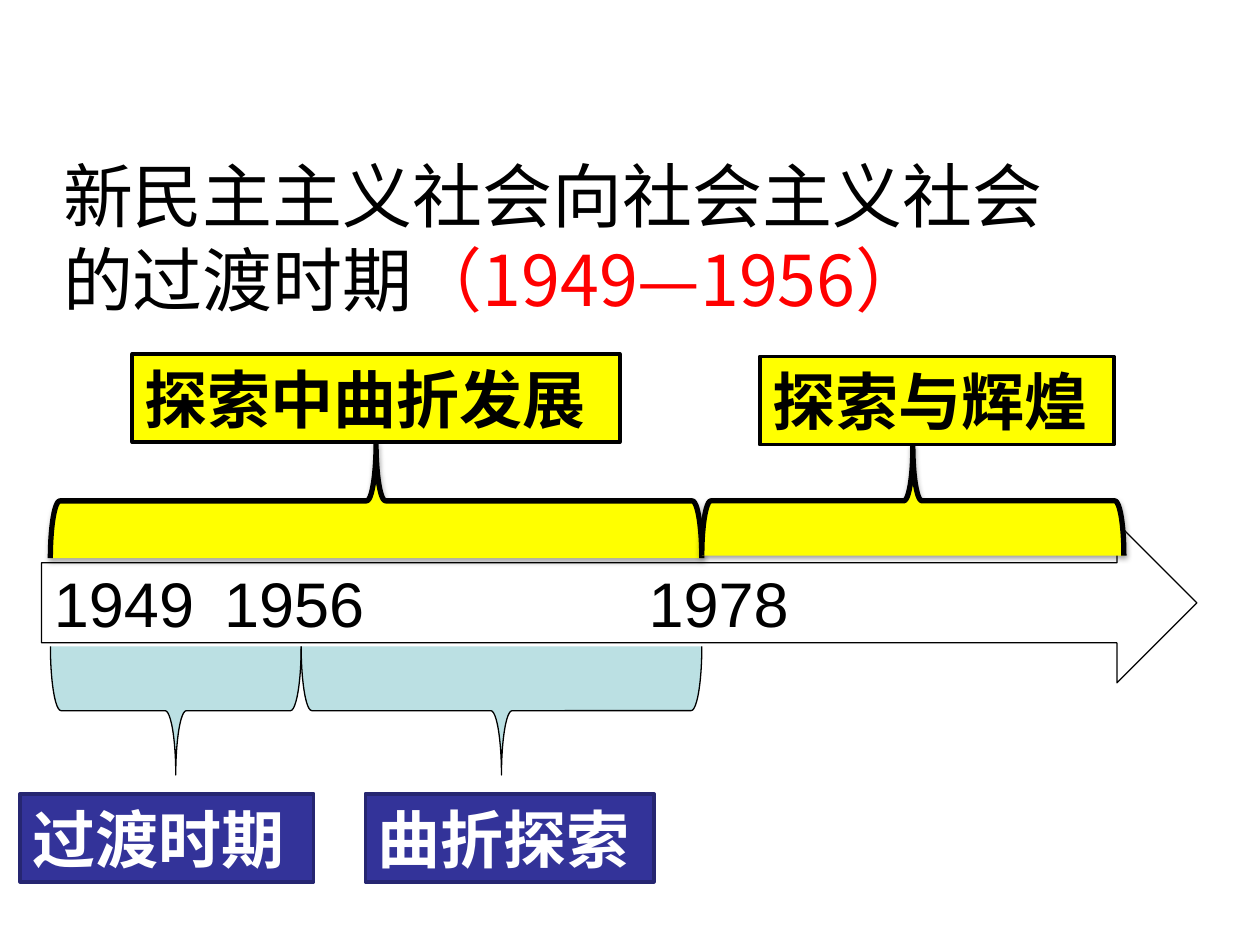
from lxml import etree
from pptx import Presentation
from pptx.dml.color import RGBColor
from pptx.enum.shapes import MSO_SHAPE as Shape
from pptx.enum.text import MSO_ANCHOR as Anchor, MSO_AUTO_SIZE as AutoSize, PP_ALIGN as Align
from pptx.oxml import parse_xml
from pptx.oxml.ns import nsdecls, qn
from pptx.util import Inches, Pt

BLACK = RGBColor(0x00, 0x00, 0x00)
WHITE = RGBColor(0xFF, 0xFF, 0xFF)
RED = RGBColor(0xFF, 0x00, 0x00)
YELLOW = RGBColor(0xFF, 0xFF, 0x00)
PALE_BLUE = RGBColor(0xBB, 0xE0, 0xE3)
INDIGO = RGBColor(0x33, 0x33, 0x99)
DARK_INDIGO = RGBColor(0x26, 0x26, 0x71)

LATIN = "Arial"
CHINESE = "Noto Sans CJK SC"

SHADOW = (
    f'<a:effectLst {nsdecls("a")}>'
    '<a:outerShdw blurRad="40000" dist="23000" dir="5400000" rotWithShape="0">'
    '<a:srgbClr val="000000"><a:alpha val="35000"/></a:srgbClr>'
    '</a:outerShdw></a:effectLst>'
)


class TimelinePage:
    """Holds the current slide and draws the parts of a timeline."""

    def __init__(self, deck):
        self.page = deck.slides.add_slide(deck.slide_layouts[5])

    def add_span(self, para, text, size, color, font=CHINESE, bold=False):
        span = para.add_run()
        span.text = text
        style = {"size": Pt(size), "name": font, "bold": bold}
        for key, value in style.items():
            setattr(span.font, key, value)
        span.font.color.rgb = color
        east_asian = etree.SubElement(span._r.get_or_add_rPr(), qn("a:ea"))
        east_asian.set("typeface", font)

    def shape(self, kind, left, top, width, height, fill, line, weight):
        shape = self.page.shapes.add_shape(
            kind, Inches(left), Inches(top), Inches(width), Inches(height))
        shape.shadow.inherit = False
        if fill is None:
            shape.fill.background()
        else:
            shape.fill.solid()
            shape.fill.fore_color.rgb = fill
        shape.line.color.rgb = line
        shape.line.width = Pt(weight)
        return shape

    def title(self, left, top, width, height, lines):
        box = self.page.shapes.title
        place = {"left": left, "top": top, "width": width, "height": height}
        for key, value in place.items():
            setattr(box, key, Inches(value))
        frame = box.text_frame
        layout = {"word_wrap": False, "auto_size": AutoSize.NONE,
                  "vertical_anchor": Anchor.TOP}
        for key, value in layout.items():
            setattr(frame, key, value)
        for index, spans in enumerate(lines):
            para = frame.add_paragraph() if index else frame.paragraphs[0]
            para.alignment = Align.LEFT
            para.line_spacing = Pt(48)
            for text, color in spans:
                self.add_span(para, text, 40, color)

    def year(self, left, text):
        box = self.page.shapes.add_textbox(
            Inches(left), Inches(4.43), Inches(1.66), Inches(0.7))
        box.text_frame.word_wrap = True
        self.add_span(box.text_frame.paragraphs[0], text, 36, BLACK, LATIN)

    def label(self, left, top, width, text, fill, line, color):
        box = self.shape(Shape.RECTANGLE, left, top, width, 0.7, fill, line, 2)
        frame = box.text_frame
        frame.word_wrap = True
        frame.vertical_anchor = Anchor.MIDDLE
        para = frame.paragraphs[0]
        para.alignment = Align.LEFT
        self.add_span(para, text, 36, color, bold=True)

    def brace(self, kind, start, end, top, depth, fill, weight, shadow=False):
        """Lay a brace on its side, from start to end along the timeline."""
        length = end - start
        left = (start + end - depth) / 2
        upright_top = top + (depth - length) / 2
        brace = self.shape(kind, left, upright_top, depth, length, fill, BLACK, weight)
        brace.rotation = 270
        brace.adjustments[0] = 0.083
        if shadow:
            properties = brace._element.spPr
            properties.replace(properties.find(qn("a:effectLst")), parse_xml(SHADOW))


def main():
    deck = Presentation()
    deck.slide_width, deck.slide_height = Inches(10), Inches(7.5)
    timeline = TimelinePage(deck)

    # Title
    timeline.title(0.4, 1.16, 7.98, 1.45, [
        [("新民主主义社会向社会主义社会", BLACK)],
        [("的过渡时期", BLACK), ("（1949—1956）", RED)],
    ])

    # Time arrow and years
    timeline.shape(Shape.RIGHT_ARROW, 0.33, 4.15, 9.17, 1.27, None, BLACK, 0.75)
    for left, text in [(0.33, "1949"), (1.68, "1956"), (5.05, "1978")]:
        timeline.year(left, text)

    # Long periods above the arrow
    for start, end, top, depth in [(0.4, 5.57, 3.52, 0.91), (5.57, 8.92, 3.54, 0.87)]:
        timeline.brace(Shape.RIGHT_BRACE, start, end, top, depth, YELLOW, 3, shadow=True)
    for left, top, width, text in [(1.05, 2.81, 3.87, "探索中曲折发展"),
                                   (6.03, 2.83, 2.81, "探索与辉煌")]:
        timeline.label(left, top, width, text, YELLOW, BLACK, BLACK)

    # Short periods below the arrow
    for start, end, left, width, text in [(0.4, 2.39, 0.16, 2.33, "过渡时期"),
                                          (2.39, 5.57, 2.9, 2.29, "曲折探索")]:
        timeline.brace(Shape.LEFT_BRACE, start, end, 5.13, 1.02, PALE_BLUE, 0.75)
        timeline.label(left, 6.3, width, text, INDIGO, DARK_INDIGO, WHITE)

    deck.save("out.pptx")


if __name__ == "__main__":
    main()
